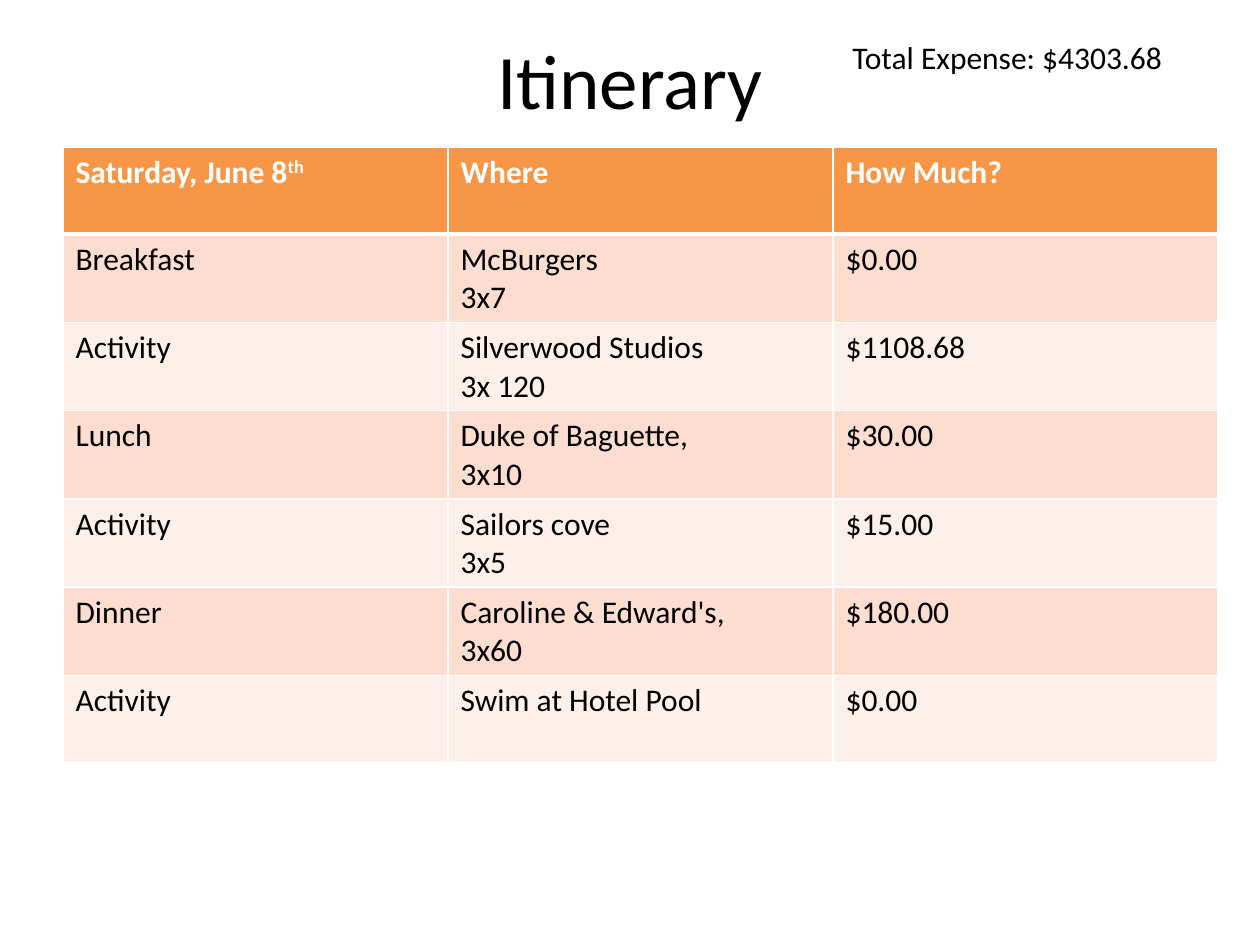
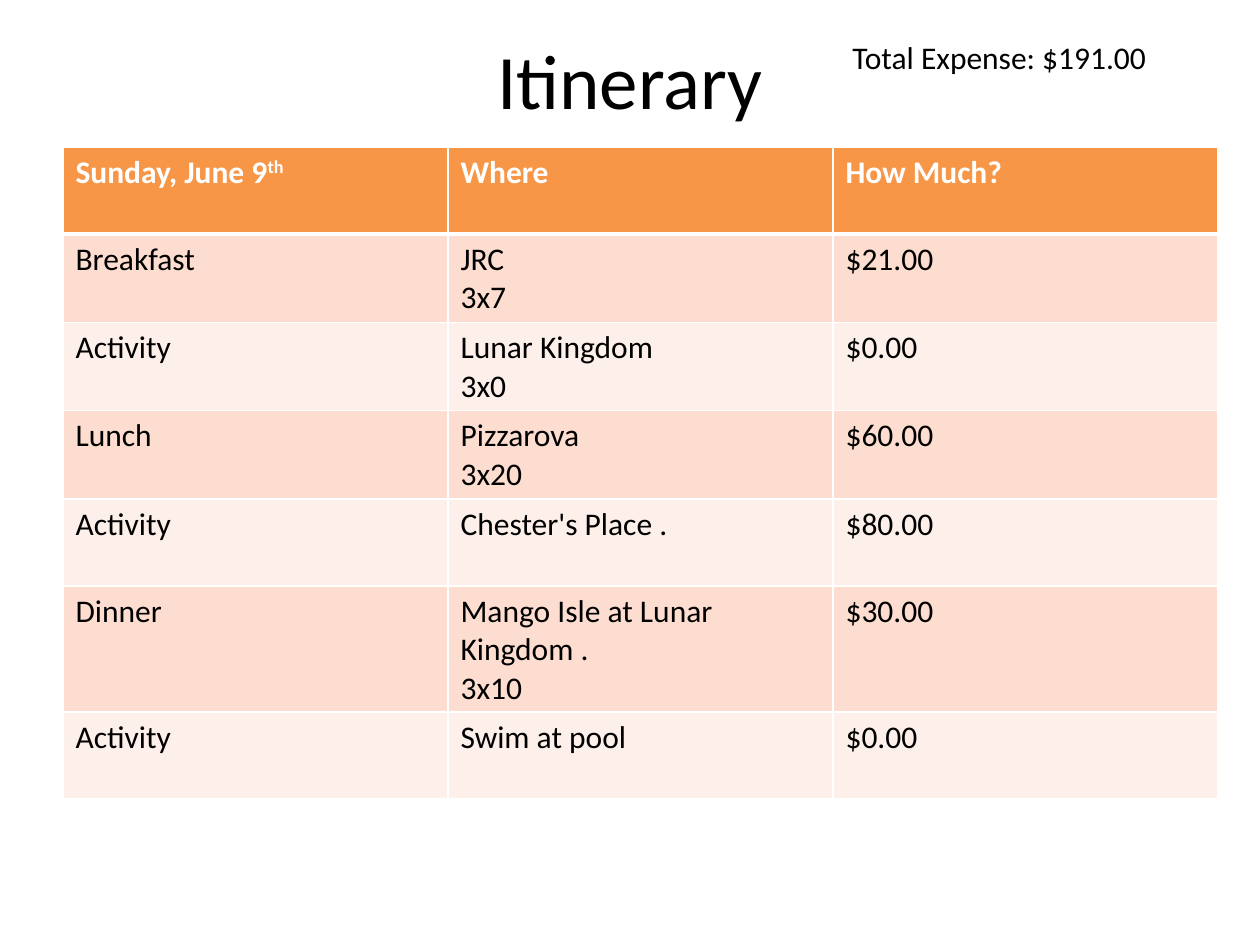
from lxml import etree
from pptx import Presentation
from pptx import util as u
from pptx.dml.color import RGBColor
from pptx.enum import text
from pptx.oxml import ns

FONT = "Calibri"
BLACK = RGBColor(0x00, 0x00, 0x00)
WHITE = RGBColor(0xFF, 0xFF, 0xFF)
ORANGE = RGBColor(0xF7, 0x96, 0x46)
BANDS = [RGBColor(0xFC, 0xDD, 0xCF), RGBColor(0xFD, 0xEF, 0xE9)]

W, H = u.Inches(10), u.Inches(7.5)
COL, ROW = W // 120, H // 90  # one twelfth of an inch each way

# Boxes in grid units: left, top, width, height
TITLE_BOX = (6, 0, 108, 15)
TOTAL_BOX = (80, 3, 37, 4.8)
TABLE_BOX = (6, 14, 110, 58.1)

MEALS = ["Breakfast", "Activity", "Lunch", "Activity", "Dinner", "Activity"]
DAYS = [
    ("Saturday, June 8", "$4303.68", [
        ("McBurgers\n3x7", "$0.00"),
        ("Silverwood Studios\n3x 120", "$1108.68"),
        ("Duke of Baguette,\n3x10", "$30.00"),
        ("Sailors cove\n3x5", "$15.00"),
        ("Caroline & Edward's,\n3x60", "$180.00"),
        ("Swim at Hotel Pool", "$0.00"),
    ]),
    ("Sunday, June 9", "$191.00", [
        ("JRC\n3x7", "$21.00"),
        ("Lunar Kingdom\n3x0", "$0.00"),
        ("Pizzarova\n3x20", "$60.00"),
        ("Chester's Place .", "$80.00"),
        ("Mango Isle at Lunar Kingdom .\n3x10", "$30.00"),
        ("Swim at pool", "$0.00"),
    ]),
]


def place(box):
    left, top, width, height = box
    return (u.Emu(int(left * COL)), u.Emu(int(top * ROW)),
            u.Emu(int(width * COL)), u.Emu(int(height * ROW)))


def write(tf, content, size=18, color=BLACK, bold=False, align=None, raised=""):
    """Write one paragraph per line, with an optional superscript at the end."""
    for i, line in enumerate(content.split("\n")):
        p = tf.paragraphs[0] if i == 0 else tf.add_paragraph()
        p.alignment = align
        for part in filter(None, (line, raised)):
            r = p.add_run()
            r.text = part
            r.font.name, r.font.size, r.font.bold = FONT, u.Pt(size), bold
            r.font.color.rgb = color
            if part == raised:
                r._r.get_or_add_rPr().set("baseline", "30000")


def style_cell(cell, fill, top=1, bottom=1):
    """Give a cell white borders (widths in points) and a plain fill."""
    tc_pr = cell._tc.get_or_add_tcPr()
    for side, width in (("L", 1), ("R", 1), ("T", top), ("B", bottom)):
        ln = etree.SubElement(tc_pr, ns.qn(f"a:ln{side}"), w=str(u.Pt(width)))
        solid = etree.SubElement(ln, ns.qn("a:solidFill"))
        etree.SubElement(solid, ns.qn("a:srgbClr"), val=str(WHITE))
    cell.fill.solid()
    cell.fill.fore_color.rgb = fill


def add_title(s, box):
    sp = s.shapes.title
    sp.left, sp.top, sp.width, sp.height = place(box)
    sp.text_frame.vertical_anchor = text.MSO_ANCHOR.MIDDLE
    write(sp.text_frame, "Itinerary", size=44, align=text.PP_ALIGN.CENTER)


def add_total(s, box, total):
    tf = s.shapes.add_textbox(*place(box)).text_frame
    tf.word_wrap = True
    tf.auto_size = text.MSO_AUTO_SIZE.SHAPE_TO_FIT_TEXT
    write(tf, f"Total Expense: {total}")


def add_plan(s, box, day, stops):
    table = s.shapes.add_table(len(stops) + 1, 3, *place(box)).table

    # Header row, set off by a thicker rule
    for c, label in enumerate((day, "Where", "How Much?")):
        cell = table.cell(0, c)
        style_cell(cell, ORANGE, bottom=3)
        write(cell.text_frame, label, color=WHITE, bold=True,
              raised="th" if c == 0 else "")

    # Banded body rows
    for n, (meal, stop) in enumerate(zip(MEALS, stops)):
        for c, value in enumerate((meal, *stop)):
            cell = table.cell(n + 1, c)
            style_cell(cell, BANDS[n % 2], top=3 if n == 0 else 1)
            write(cell.text_frame, value)


def add_day(prs, day, total, stops):
    s = prs.slides.add_slide(prs.slide_layouts.get_by_name("Title Only"))
    add_title(s, TITLE_BOX)
    add_total(s, TOTAL_BOX, total)
    add_plan(s, TABLE_BOX, day, stops)


def main():
    prs = Presentation()
    prs.slide_width, prs.slide_height = W, H
    for day in DAYS:
        add_day(prs, *day)
    prs.save("out.pptx")


if __name__ == "__main__":
    main()
